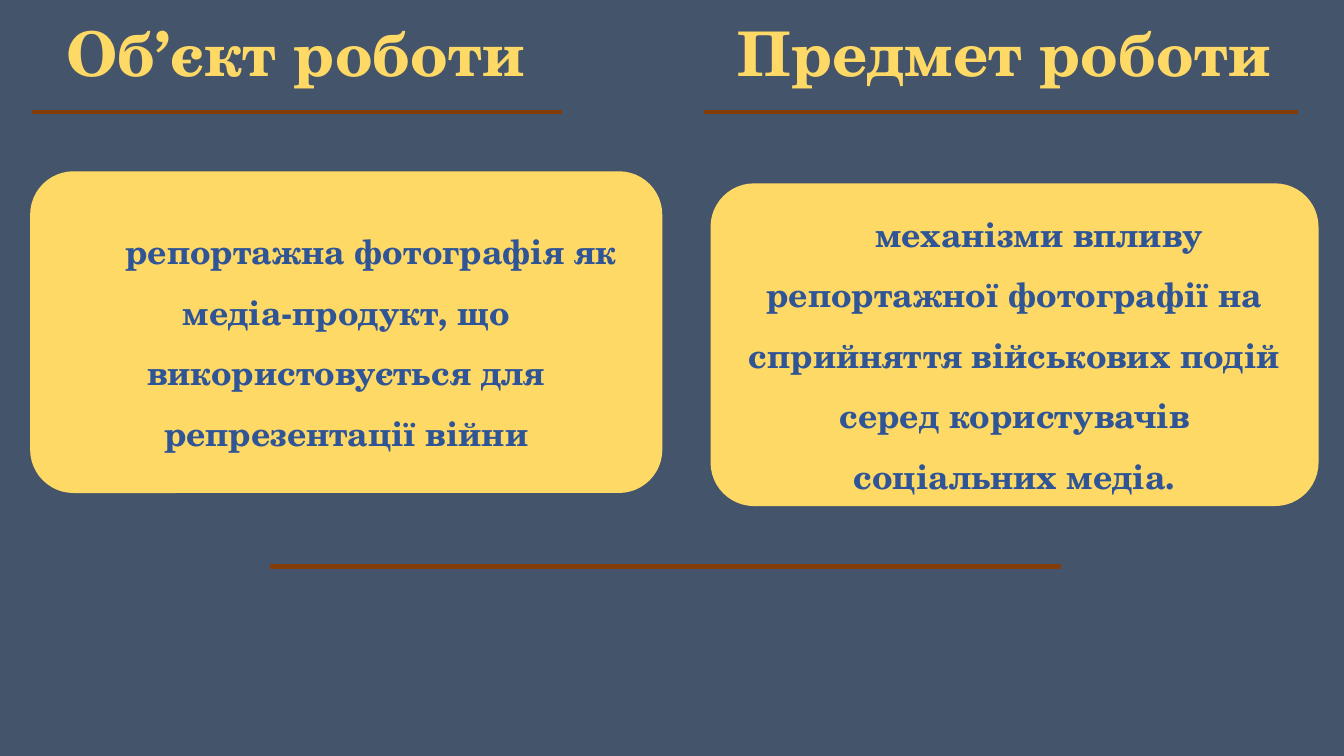
from lxml import etree
from pptx import Presentation
from pptx.dml.color import RGBColor
from pptx.enum.shapes import MSO_CONNECTOR, MSO_SHAPE
from pptx.enum.text import MSO_ANCHOR, MSO_AUTO_SIZE, PP_ALIGN
from pptx.oxml.ns import qn
from pptx.util import Inches, Pt

LINE = MSO_CONNECTOR.STRAIGHT
ROUND = MSO_SHAPE.ROUNDED_RECTANGLE
TOP, MIDDLE = MSO_ANCHOR.TOP, MSO_ANCHOR.MIDDLE
LEFT, CENTER = PP_ALIGN.LEFT, PP_ALIGN.CENTER
FIT, FIXED = MSO_AUTO_SIZE.SHAPE_TO_FIT_TEXT, MSO_AUTO_SIZE.NONE
TITLE_ONLY = 5

COLS, ROWS = 80, 45
FONT = "TeX Gyre Schola"
COLORS = {"back": "44546A", "gold": "FFD966", "rust": "843C0B", "blue": "2F5597"}


class Board:
    """Style and current slide; all lengths are grid columns and rows."""

    def __init__(self, deck):
        self.col = deck.slide_width / COLS
        self.row = deck.slide_height / ROWS
        self.slide = deck.slides.add_slide(deck.slide_layouts[TITLE_ONLY])
        self.shapes = self.slide.shapes
        self.paint(self.slide.background.fill, "back")

    def place(self, x, y, w, h):
        return [round(n) for n in
                (x * self.col, y * self.row, w * self.col, h * self.row)]

    def paint(self, fill, color):
        fill.solid()
        fill.fore_color.rgb = RGBColor.from_string(COLORS[color])

    def stroke(self, line, color, width):
        self.paint(line.fill, color)
        line.width = Pt(width)

    def label(self, shape, text, size, color, align, anchor, fit):
        frame = shape.text_frame
        frame.word_wrap = True
        frame.auto_size = fit
        frame.vertical_anchor = anchor
        para = frame.paragraphs[0]
        para.alignment = align
        run = para.add_run()
        run.text = text
        run.font.name = FONT
        run.font.size = Pt(size)
        run.font.bold = True
        run.font.color.rgb = RGBColor.from_string(COLORS[color])
        return para

    def head(self, text, x, y, w, h, title=False):
        spot = self.place(x, y, w, h)
        if title:
            shape = self.shapes.title
            shape.left, shape.top, shape.width, shape.height = spot
        else:
            shape = self.shapes.add_textbox(*spot)
        self.label(shape, text, 44, "gold", LEFT, TOP, FIT)

    def rule(self, x, y, w):
        left, top, wide, _ = self.place(x, y, w, 0)
        line = self.shapes.add_connector(LINE, left, top, left + wide, top)
        self.stroke(line.line, "rust", 3.25)
        etree.SubElement(line._element.spPr, qn("a:effectLst"))

    def card(self, text, x, y, w, h):
        shape = self.shapes.add_shape(ROUND, *self.place(x, y, w, h))
        shape.adjustments[0] = 0.13
        shape.shadow.inherit = False
        self.paint(shape.fill, "gold")
        self.stroke(shape.line, "gold", 3)
        para = self.label(shape, text, 24, "blue", CENTER, MIDDLE, FIXED)
        para.line_spacing = 1.5
        # First-line indent
        para._p.get_or_add_pPr().set("indent", str(Inches(0.49)))


def main():
    deck = Presentation()
    deck.slide_width, deck.slide_height = Inches(13.33), Inches(7.5)
    board = Board(deck)

    # Two topics: heading, its width, rule start and length, card text and place
    topics = [
        ("Об’єкт роботи", 30.6, 1.92, 31.56,
         "репортажна фотографія як медіа-продукт, що використовується "
         "для репрезентації війни", (1.92, 10.32, 37.38, 18.9)),
        ("Предмет роботи", 35.04, 41.88, 35.4,
         "механізми впливу репортажної фотографії на сприйняття військових "
         "подій серед користувачів соціальних медіа.",
         (42.42, 11.04, 35.94, 18.96)),
    ]
    for i, (name, wide, x, span, text, spot) in enumerate(topics):
        board.head(name, x + 1.44, 0.6, wide, 5.04, title=i == 0)
        board.rule(x, 6.66, span)
        board.card(text, *spot)

    # Closing rule
    board.rule(16.08, 33.72, 47.1)

    deck.save("out.pptx")


if __name__ == "__main__":
    main()
